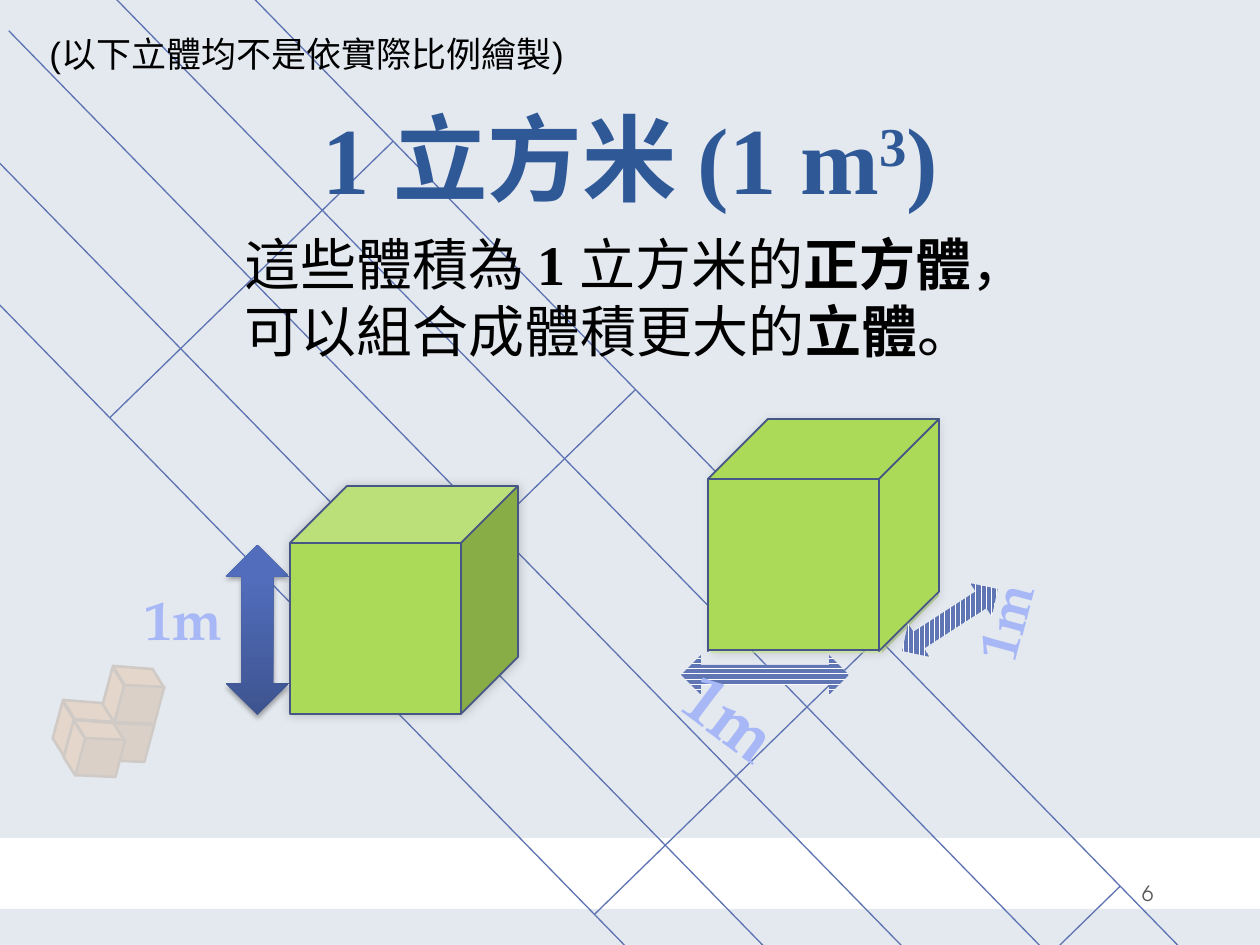
from math import cos, radians, sin

from lxml.etree import SubElement
from pptx import Presentation
from pptx.dml.color import RGBColor
from pptx.enum.dml import MSO_PATTERN as Pattern
from pptx.enum.shapes import MSO_CONNECTOR, MSO_SHAPE as Shape
from pptx.enum.text import MSO_ANCHOR as Anchor, MSO_AUTO_SIZE, PP_ALIGN as Align
from pptx.oxml.ns import qn
from pptx.util import Emu, Pt

PX = 914400 // 126

PALE = RGBColor(0xE4, 0xE9, 0xEF)
ORANGE = RGBColor(0xE6, 0x84, 0x22)
RUST = RGBColor(0xB2, 0x63, 0x14)
BROWN = RGBColor(0x77, 0x42, 0x0D)
GRID_BLUE = RGBColor(0x5C, 0x72, 0xB2)
GREEN = RGBColor(0xAB, 0xD9, 0x58)
LIGHT_GREEN = RGBColor(0xC7, 0xE6, 0x8F)
EDGE = RGBColor(0x47, 0x57, 0x85)
HATCH = RGBColor(0x60, 0x76, 0xB4)
ARROW_DARK = RGBColor(0x3E, 0x54, 0x90)
ARROW_LIGHT = RGBColor(0x51, 0x6D, 0xBB)
TITLE_BLUE = RGBColor(0x2F, 0x58, 0x97)
LABEL_BLUE = RGBColor(0xA8, 0xB8, 0xF6)
GREY = RGBColor(0x59, 0x59, 0x59)
WHITE = RGBColor(0xFF, 0xFF, 0xFF)
BLACK = RGBColor(0, 0, 0)

SERIF, SANS = "Times New Roman", "Arial"

# Content: (text, format) spans
TITLE = [("1 立方米 (1 m", {}), ("3", {"raised": True}), (")", {})]
BODY = [
    ("這些體積為 ", {}),
    ("1 ", {"name": SERIF, "bold": True}),
    ("立方米的", {}),
    ("正方體", {"bold": True}),
    ("，可以組合成體積更大的", {}),
    ("立體", {"bold": True}),
    ("。", {}),
]
NOTE = "(以下立體均不是依實際比例繪製)"
PAGE_NUMBER = "6"
# Edge labels: text, frame, size, turn
LABELS = [
    ("1m", (659, 670, 141, 100), 40, 37),
    ("1m", (937, 572, 141, 100), 32, -75),
    ("1m", (113, 572, 141, 100), 32, 0),
]

# Small crates: width, height, turn, flips, adjustment, colour
CRATE_FACES = {
    "side": (53, 16, 105, "HV", 0.92, ORANGE),
    "lid": (53, 18, 184.5, "V", 0.73, ORANGE),
    "front": (47, 39, 105, "H", 0.22, RUST),
}
CRATES = [
    ("side", 37, 721), ("lid", 62, 702), ("side", 87, 687),
    ("lid", 112, 668), ("front", 106, 723), ("lid", 73, 722),
    ("side", 48, 740), ("front", 77, 738), ("front", 116, 685),
]

# Tilted grid around its centre
GRID_CENTRE, GRID_TURN = (615, 652), radians(45.7)
GRID_HALF_LENGTH, GRID_HALF_HEIGHT = 868, 198
ROW_GAP, COLUMN_GAP = 99, 347

# Faces of the right-hand cube, hidden ones first
BACK_FACES = [
    (Shape.PARALLELOGRAM, (709, 591, 228, 59), {"adjust": 0.98}),
    (Shape.PARALLELOGRAM, (622, 505, 232, 60), {"adjust": 1.02, "turn": 90, "flips": "V"}),
    (Shape.RECTANGLE, (767, 420, 171, 171), {}),
]
FRONT_FACES = [
    (Shape.PARALLELOGRAM, (793, 505, 232, 60), {"adjust": 0.99, "turn": 90, "flips": "V"}),
    (Shape.RECTANGLE, (708, 479, 171, 171), {}),
    (Shape.PARALLELOGRAM, (708, 419, 231, 60), {"adjust": 1}),
]
# Hatched arrows: frame, turn, pattern
HATCHED_ARROWS = [
    ((893, 600, 114, 40), -33, Pattern.DARK_VERTICAL),
    ((681, 655, 168, 40), 0, Pattern.DARK_HORIZONTAL),
]

deck = Presentation()
deck.slide_width, deck.slide_height = Emu(1260 * PX), Emu(945 * PX)
page = deck.slides.add_slide(deck.slide_layouts[5])


def emu(frame):
    return [Emu(round(value * PX)) for value in frame]


def draw(kind, frame, fill=None, line=None, width=1, turn=0, flips="", adjust=None, opacity=None):
    shape = page.shapes.add_shape(kind, *emu(frame))
    shape.shadow.inherit = False
    shape.rotation = turn
    for axis in flips:
        shape.element.spPr.xfrm.set("flip" + axis, "1")
    if adjust is not None:
        shape.adjustments[0] = adjust
    if fill is not None:
        shape.fill.solid()
        shape.fill.fore_color.rgb = fill
    if opacity is not None:
        colour = shape.element.spPr.find(".//" + qn("a:srgbClr"))
        SubElement(colour, qn("a:alpha"), val=str(opacity * 1000))
    if line is None:
        shape.line.fill.background()
    else:
        shape.line.color.rgb = line
        shape.line.width = Pt(width)
    return shape


def cast_shadow(shape, opacity, blur, distance, angle):
    effects = shape.element.spPr.find(qn("a:effectLst"))
    shadow = SubElement(effects, qn("a:outerShdw"), blurRad=str(Pt(blur)),
                        dist=str(Pt(distance)), dir=str(angle * 60000), rotWithShape="0")
    colour = SubElement(shadow, qn("a:srgbClr"), val="000000")
    SubElement(colour, qn("a:alpha"), val=str(opacity * 1000))


def write(box, spans, size, name, colour, bold=False, align=Align.LEFT,
          anchor=Anchor.TOP, margin=None, spacing=None):
    frame = box.text_frame
    frame.word_wrap = True
    frame.auto_size = MSO_AUTO_SIZE.NONE
    frame.vertical_anchor = anchor
    if margin is not None:
        frame.margin_left = frame.margin_right = Emu(margin * PX)
        frame.margin_top = frame.margin_bottom = Emu(margin * PX)
    para = frame.paragraphs[0]
    para.alignment = align
    para.line_spacing = spacing
    for text, style in spans:
        span = para.add_run()
        span.text = text
        span.font.size = Pt(size)
        span.font.name = style.get("name", name)
        span.font.bold = style.get("bold", bold)
        span.font.color.rgb = colour
        if style.get("raised"):
            span._r.get_or_add_rPr().set("baseline", "30000")


def add_text(frame, spans, **style):
    box = page.shapes.add_textbox(*emu(frame))
    write(box, spans, **style)
    return box


def grid_line(*ends):
    points = []
    for along, across in ends:
        points += [GRID_CENTRE[0] + along * cos(GRID_TURN) - across * sin(GRID_TURN),
                   GRID_CENTRE[1] + along * sin(GRID_TURN) + across * cos(GRID_TURN)]
    line = page.shapes.add_connector(MSO_CONNECTOR.STRAIGHT, *emu(points))
    line.line.color.rgb = GRID_BLUE
    line.line.width = Pt(0.75)
    SubElement(line.element.spPr, qn("a:effectLst"))


# Background bands and faded crates
draw(Shape.RECTANGLE, (0, 909, 1260, 36), PALE)
draw(Shape.RECTANGLE, (0, 0, 1260, 838), PALE)
for face, left, top in CRATES:
    wide, high, turn, flips, adjust, fill = CRATE_FACES[face]
    draw(Shape.PARALLELOGRAM, (left, top, wide, high), fill, BROWN, 1.5, turn, flips, adjust)
draw(Shape.RECTANGLE, (0, 484, 189, 331), PALE, opacity=82)

# Tilted grid
for step in (-1.5, -0.5, 0.5, 1.5):
    grid_line((step * COLUMN_GAP, -GRID_HALF_HEIGHT), (step * COLUMN_GAP, GRID_HALF_HEIGHT))
for step in range(-2, 3):
    grid_line((-GRID_HALF_LENGTH, step * ROW_GAP), (GRID_HALF_LENGTH, step * ROW_GAP))

# Right-hand cube
for kind, frame, options in BACK_FACES:
    draw(kind, frame, GREEN, EDGE, **options)
cast_shadow(draw(Shape.CUBE, (711, 420, 228, 233), LIGHT_GREEN, opacity=65), 20, 6, 0, 315)
for kind, frame, options in FRONT_FACES:
    draw(kind, frame, GREEN, EDGE, **options)

# Title, raised above the background
title = page.shapes.title
title.element.getparent().append(title.element)
title.left, title.top, title.width, title.height = emu((63, 0, 1134, 220))
write(title, TITLE, size=54, name=SERIF, colour=TITLE_BLUE, bold=True,
      align=Align.CENTER, anchor=Anchor.BOTTOM, spacing=Pt(58))

# Arrows along the cube edges
for frame, turn, pattern in HATCHED_ARROWS:
    arrow = draw(Shape.LEFT_RIGHT_ARROW, frame, turn=turn)
    arrow.fill.patterned()
    arrow.fill.pattern = pattern
    arrow.fill.fore_color.rgb = HATCH
    arrow.fill.back_color.rgb = WHITE
height_arrow = draw(Shape.UP_DOWN_ARROW, (226, 545, 63, 170))
height_arrow.fill.gradient()
height_arrow.fill.gradient_angle = 90
for stop, position, colour in zip(height_arrow.fill.gradient_stops, (0, 0.8),
                                  (ARROW_DARK, ARROW_LIGHT)):
    stop.color.rgb = colour
    stop.position = position
cast_shadow(height_arrow, 35, 3.1, 1.8, 90)

# Left-hand cube
cast_shadow(draw(Shape.CUBE, (290, 486, 228, 228), GREEN, EDGE), 20, 6, 0, 315)

# Edge labels and running text
for text, frame, size, turn in LABELS:
    label = add_text(frame, [(text, {})], size=size, name="TeX Gyre Pagella", colour=LABEL_BLUE,
                     bold=True, align=Align.CENTER, anchor=Anchor.MIDDLE, margin=1, spacing=0.9)
    label.rotation = turn
add_text((232, 223, 805, 149), BODY, size=32, name=SANS, colour=BLACK)
add_text((37, 26, 543, 55), [(NOTE, {})], size=20, name=SANS, colour=BLACK)
add_text((1138, 868, 77, 50), [(PAGE_NUMBER, {})], size=12, name="TeX Gyre Adventor",
         colour=GREY, anchor=Anchor.MIDDLE, margin=4)

deck.save("out.pptx")
